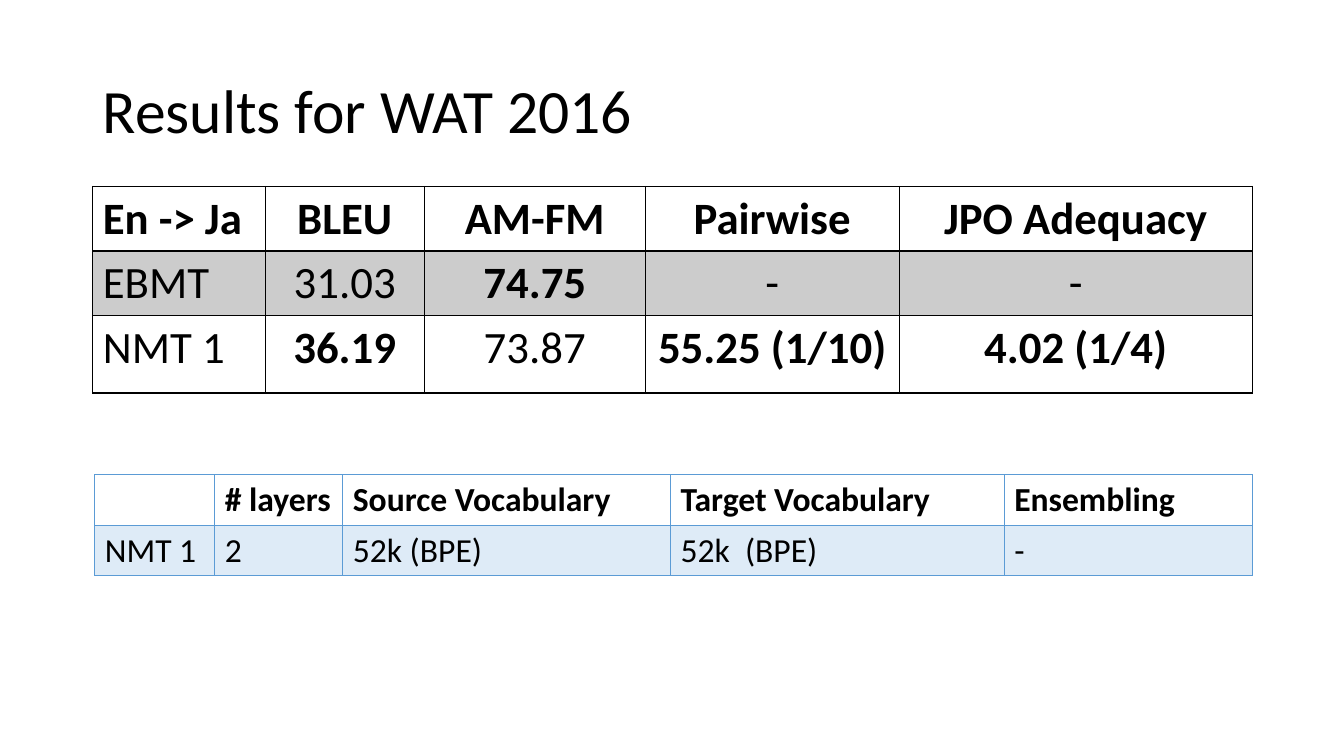
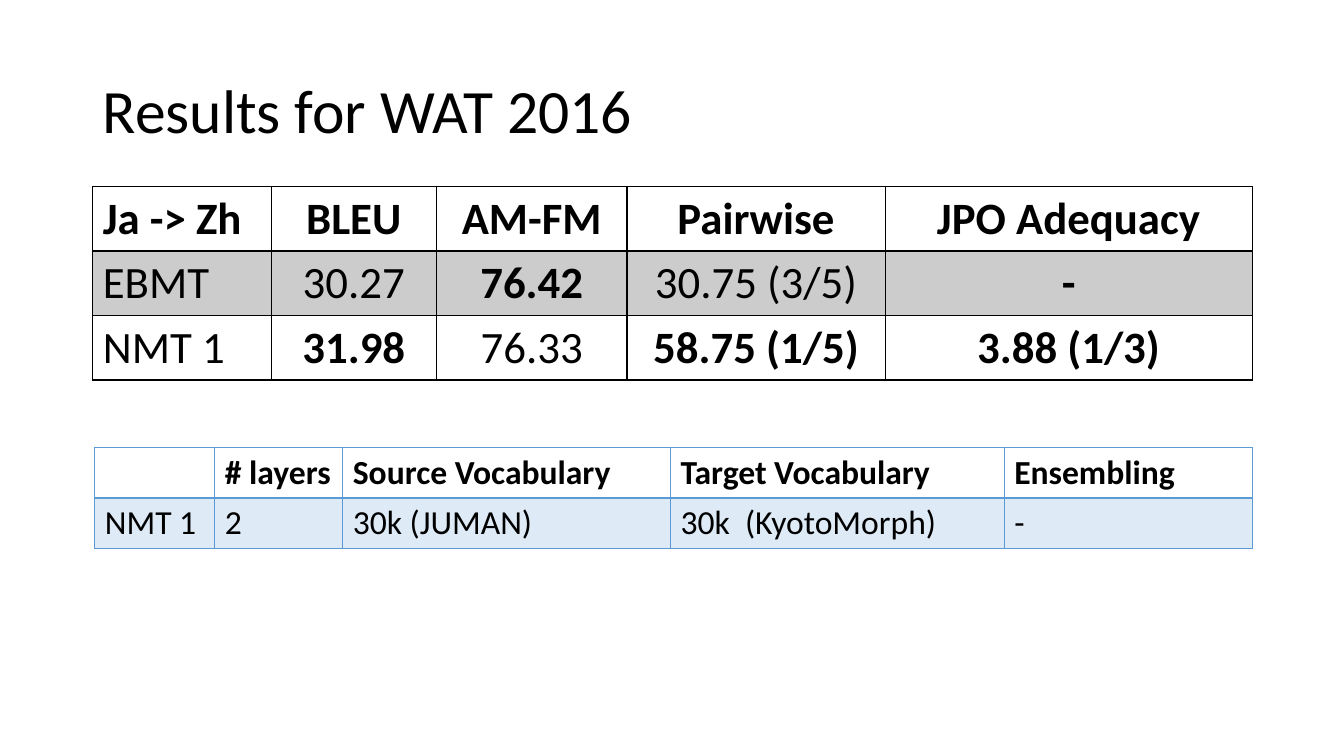
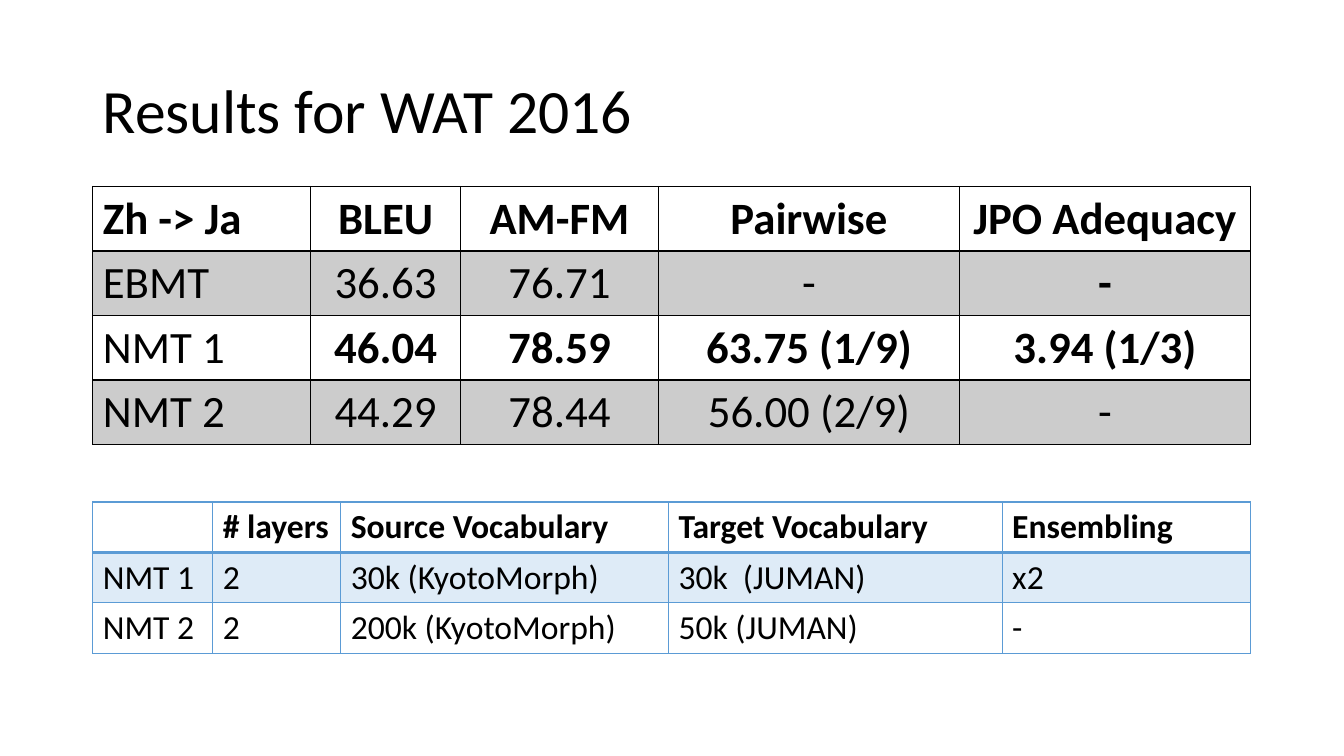
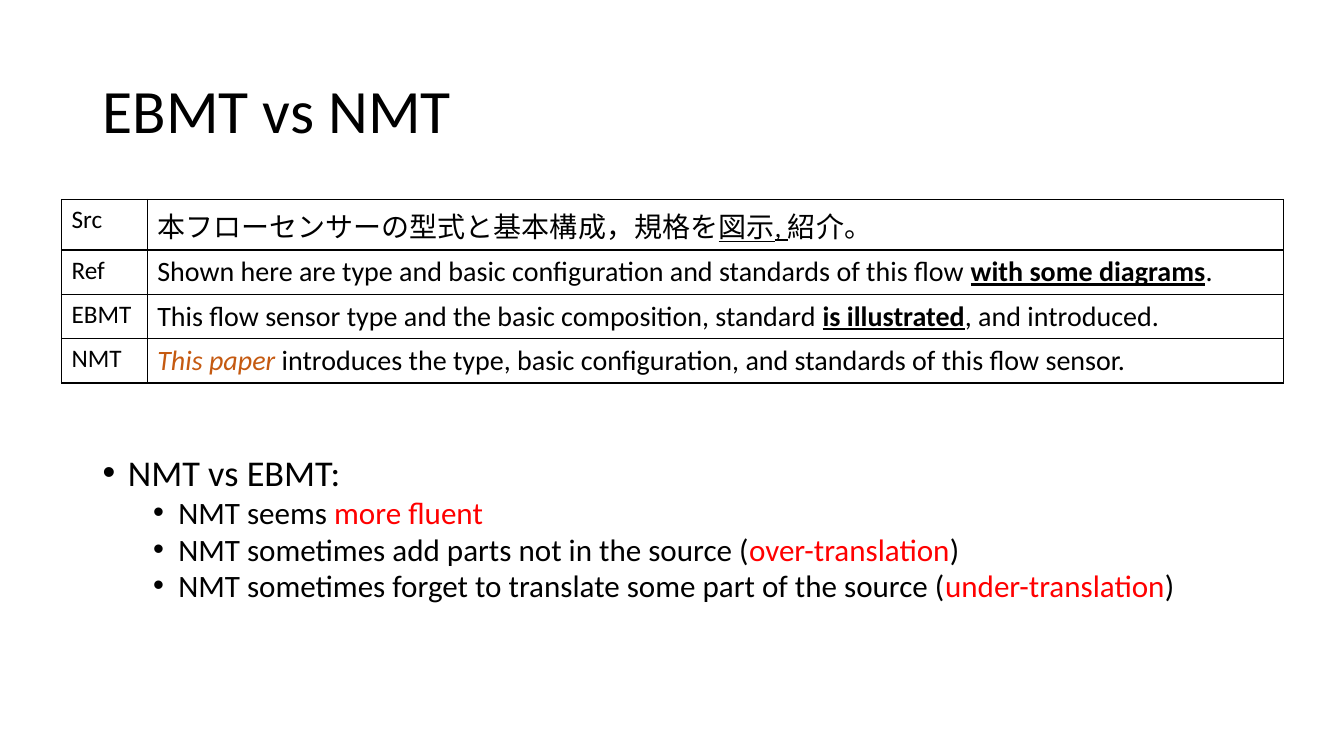
from lxml import etree
from pptx import Presentation
from pptx.dml.color import RGBColor
from pptx.enum.text import MSO_ANCHOR, PP_ALIGN
from pptx.oxml.ns import qn
from pptx.util import Emu, Pt

LEFT, CENTER = PP_ALIGN.LEFT, PP_ALIGN.CENTER
MIDDLE = MSO_ANCHOR.MIDDLE
PX = 9144  # 100 px to the inch

# Shared look
BLACK, BLUE, RED, ORANGE = "000000", "5B9BD5", "FF0000", "C55A11"
GREY_BAND, BLUE_BAND = "CCCCCC", "DEEBF7"
BASE = {"name": "Calibri", "color": BLACK}
BOLD = {"bold": True}
UNDER = {"underline": True}
STRONG = {"bold": True, "underline": True}
HOT = {"color": RED}
TITLE_BOX = (92, 40, 1150, 145)


def bold(text):
    return [(text, BOLD)]


# Content: a cell is a string or a list of (text, format) runs
SCORE_HEADS = ["BLEU", "AM-FM", "Pairwise", "JPO Adequacy"]
SETUP_HEADS = ["", "# layers", "Source Vocabulary", "Target Vocabulary", "Ensembling"]
SETUP_COLS = [119, 127, 325, 331, 246]

RESULTS = [
    {"pair": "En -> Ja", "cols": [171, 158, 219, 252, 350], "heights": [64, 64, 77],
     "scores": [
         ["EBMT", "31.03", bold("74.75"), "-", "-"],
         ["NMT 1", bold("36.19"), "73.87", bold("55.25 (1/10)"), bold("4.02 (1/4)")]],
     "setup_at": (94, 471), "setup_rule": 1,
     "setup": [["NMT 1", "2", "52k (BPE)", "52k  (BPE)", "-"]]},
    {"pair": "Ja -> Zh", "cols": [177, 164, 189, 256, 364], "heights": [64] * 3,
     "scores": [
         ["EBMT", "30.27", bold("76.42"), "30.75 (3/5)", bold("-")],
         ["NMT 1", bold("31.98"), "76.33", bold("58.75 (1/5)"), bold("3.88 (1/3)")]],
     "setup_at": (94, 444), "setup_rule": 1,
     "setup": [["NMT 1", "2", "30k (JUMAN)", "30k  (KyotoMorph)", "-"]]},
    {"pair": "Zh -> Ja", "cols": [216, 149, 196, 299, 288], "heights": [64] * 4,
     "scores": [
         ["EBMT", "36.63", "76.71", "-", bold("-")],
         ["NMT 1", bold("46.04"), bold("78.59"), bold("63.75 (1/9)"), bold("3.94 (1/3)")],
         ["NMT 2", "44.29", "78.44", "56.00 (2/9)", "-"]],
     "setup_at": (92, 498), "setup_rule": 2,
     "setup": [["NMT 1", "2", "30k (KyotoMorph)", "30k  (JUMAN)", "x2"],
               ["NMT 2", "2", "200k (KyotoMorph)", "50k (JUMAN)", "-"]]},
]

EXAMPLES = [
    ["Src", [("本フローセンサーの型式と基本構成，規格を", {}), ("図示, ", UNDER), ("紹介。", {})]],
    ["Ref", [("Shown here are type and basic configuration and standards of this flow ", {}),
             ("with some diagrams", STRONG), (".", {})]],
    ["EBMT", [("This flow sensor type and the basic composition, standard ", {}),
              ("is illustrated", STRONG), (", and introduced.", {})]],
    ["NMT", [("This paper ", {"color": ORANGE, "italic": True}),
             ("introduces the type, basic configuration, and standards of this flow sensor.", {})]],
]

# (level, runs)
FINDINGS = [
    (0, "NMT vs EBMT:"),
    (1, [("NMT seems ", {}), ("more fluent", HOT)]),
    (1, [("NMT sometimes add parts not in the source (", {}),
         ("over-translation", HOT), (")", {})]),
    (1, [("NMT sometimes forget to translate some part of the source (", {}),
         ("under-translation", HOT), (")", {})]),
]
# level: (left margin px, size, space before)
LEVELS = {0: (25, 25.9, 10), 1: (75, 22.2, 5)}
HANG = 25


# Helpers
def px(n):
    return Emu(n * PX)


def rgb(value):
    return RGBColor.from_string(value)


def write(p, content, **fmt):
    """Fill a paragraph with a string or with (text, format) runs."""
    runs = [(content, {})] if isinstance(content, str) else content
    for text, extra in runs:
        if not text:
            continue
        r = p.add_run()
        r.text = text
        for key, value in {**BASE, **fmt, **extra}.items():
            if key == "color":
                r.font.color.rgb = rgb(value)
            else:
                setattr(r.font, key, value)


def add_text(slide, box):
    tf = slide.shapes.add_textbox(*map(px, box)).text_frame
    tf.word_wrap = True
    return tf


def add_titled_slide(prs, title):
    slide = prs.slides.add_slide(prs.slide_layouts[6])
    tf = add_text(slide, TITLE_BOX)
    tf.vertical_anchor = MIDDLE
    tf.paragraphs[0].line_spacing = 0.9
    write(tf.paragraphs[0], title, size=Pt(44))
    return slide


def set_borders(cell, color, top=1, bottom=1):
    tc_pr = cell._tc.get_or_add_tcPr()
    for side, width in (("L", 1), ("R", 1), ("T", top), ("B", bottom)):
        ln = etree.SubElement(tc_pr, qn(f"a:ln{side}"), w=str(Pt(width)))
        fill = etree.SubElement(ln, qn("a:solidFill"))
        etree.SubElement(fill, qn("a:srgbClr"), val=color)


def add_grid(slide, at, cols, heights, rows, sizes, line=BLACK, band=None,
             header=False, rule=1, aligns=None):
    """Draw a ruled table; odd rows take the band colour."""
    x, y = at
    table = slide.shapes.add_table(len(rows), len(cols), px(x), px(y),
                                   px(sum(cols)), px(sum(heights))).table
    table.first_row = table.horz_banding = False
    for col, width in zip(table.columns, cols):
        col.width = px(width)
    for i, (row, height) in enumerate(zip(rows, heights)):
        table.rows[i].height = px(height)
        for j, content in enumerate(row):
            cell = table.cell(i, j)
            set_borders(cell, line, top=rule if i == 1 else 1,
                        bottom=rule if i == 0 else 1)
            if band and i % 2:
                cell.fill.solid()
                cell.fill.fore_color.rgb = rgb(band)
            else:
                cell.fill.background()
            p = cell.text_frame.paragraphs[0]
            p.alignment = aligns[j] if aligns else LEFT
            write(p, content, size=Pt(sizes[j]), bold=header and i == 0)


def add_results_slide(prs, res):
    slide = add_titled_slide(prs, "Results for WAT 2016")
    add_grid(slide, (92, 185), res["cols"], res["heights"],
             [[res["pair"]] + SCORE_HEADS] + res["scores"], [32] * 5,
             band=GREY_BAND, header=True, aligns=[LEFT] + [CENTER] * 4)
    setup = [SETUP_HEADS] + res["setup"]
    add_grid(slide, res["setup_at"], SETUP_COLS, [50] * len(setup), setup, [24] * 5,
             line=BLUE, band=BLUE_BAND, header=True, rule=res["setup_rule"])


def add_comparison_slide(prs):
    slide = add_titled_slide(prs, "EBMT vs NMT")
    add_grid(slide, (61, 198), [85, 1127], [50, 44, 44, 44], EXAMPLES, [18, 20])
    tf = add_text(slide, (92, 450, 1150, 166))
    for i, (level, content) in enumerate(FINDINGS):
        margin, size, before = LEVELS[level]
        p = tf.add_paragraph() if i else tf.paragraphs[0]
        p.level = level
        p.line_spacing = 0.8
        p.space_before = Pt(before)
        p_pr = p._p.get_or_add_pPr()
        p_pr.set("marL", str(px(margin)))
        p_pr.set("indent", str(px(-HANG)))
        etree.SubElement(p_pr, qn("a:buFont"), typeface="Arial")
        etree.SubElement(p_pr, qn("a:buChar"), char="•")
        write(p, content, size=Pt(size))


def main():
    prs = Presentation()
    prs.slide_width, prs.slide_height = px(1333), px(750)
    for res in RESULTS:
        add_results_slide(prs, res)
    add_comparison_slide(prs)
    prs.save("out.pptx")


if __name__ == "__main__":
    main()
